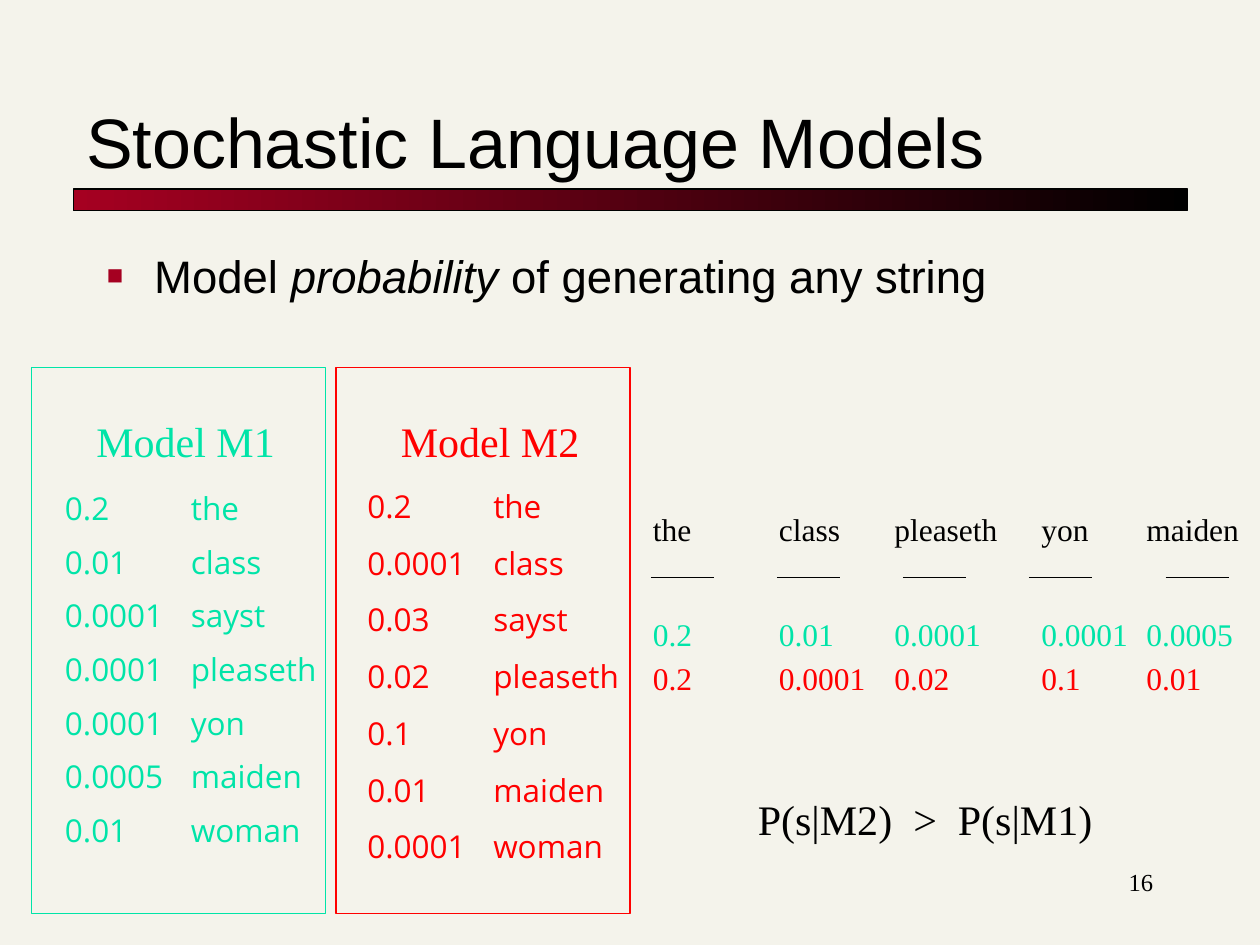
from lxml.etree import SubElement
from pptx import Presentation
from pptx.dml.color import RGBColor
from pptx.enum.shapes import MSO_CONNECTOR, MSO_SHAPE
from pptx.enum.text import MSO_ANCHOR, MSO_AUTO_SIZE, PP_ALIGN
from pptx.oxml.ns import qn
from pptx.util import Pt

BLACK, RED, GREEN, CRIMSON, CREAM = "000000", "FF0000", "00E4A8", "A50021", "F4F3EB"
SERIF = "Times New Roman"
WORDS = ["the", "class", "sayst", "pleaseth", "yon", "maiden", "woman"]
M1_VALUES = ["0.2", "0.01", "0.0001", "0.0001", "0.0001", "0.0005", "0.01"]
M2_VALUES = ["0.2", "0.0001", "0.03", "0.02", "0.1", "0.01", "0.0001"]
SENTENCE = ["the", "class", "pleaseth", "yon", "maiden"]
COLUMN_LEFTS = [0, 72, 138, 222, 282]
COLUMN_WIDTHS = [78, 78, 78, 72, 108]
BLANK_LEFTS = [6, 78, 150, 222, 300]


def set_color(color_format, hex_color):
    color_format.rgb = RGBColor.from_string(hex_color)


def apply_format(target, values):
    for name, value in values.items():
        setattr(target, name, value)


def add_run(paragraph, text, size, font_name, color, **extra):
    run = paragraph.add_run()
    run.text = text
    apply_format(run.font, {"size": Pt(size), "name": font_name, **extra})
    set_color(run.font.color, color)


def place(shape, box):
    names = ("left", "top", "width", "height")
    apply_format(shape, {name: Pt(value) for name, value in zip(names, box)})


def add_text(slide, box, lines, size, font_name, color, **paragraph_format):
    shape = slide.shapes.add_textbox(*map(Pt, box))
    frame = shape.text_frame
    frame.word_wrap = True
    for index, line in enumerate(lines):
        paragraph = frame.add_paragraph() if index else frame.paragraphs[0]
        apply_format(paragraph, paragraph_format)
        add_run(paragraph, line, size, font_name, color)
    return frame


def add_tab_stop(paragraph, position):
    tab_list = SubElement(paragraph._p.get_or_add_pPr(), qn("a:tabLst"))
    SubElement(tab_list, qn("a:tab"), pos=str(Pt(position)), algn="l")


def add_rectangle(slide, box, line_color):
    shape = slide.shapes.add_shape(MSO_SHAPE.RECTANGLE, *map(Pt, box))
    shape.shadow.inherit = False
    shape.fill.background()
    set_color(shape.line.color, line_color)
    shape.line.width = Pt(0.75)
    return shape


def add_title(slide, box, text):
    left, top, width, height = box
    bar = add_rectangle(slide, (left, top + height, width, 12.5), BLACK)
    bar.fill.gradient()
    bar.fill.gradient_angle = 0
    for stop, color, position in zip(bar.fill.gradient_stops, (CRIMSON, BLACK), (0, 1)):
        set_color(stop.color, color)
        stop.position = position
    title = slide.shapes.title
    place(title, box)
    frame = title.text_frame
    apply_format(frame, {
        "vertical_anchor": MSO_ANCHOR.BOTTOM,
        "auto_size": MSO_AUTO_SIZE.NONE,
        "word_wrap": True,
    })
    paragraph = frame.paragraphs[0]
    paragraph.alignment = PP_ALIGN.LEFT
    add_run(paragraph, text, 40, "Arial", BLACK)


def add_bullet(slide, box, parts):
    frame = slide.shapes.add_textbox(*map(Pt, box)).text_frame
    frame.word_wrap = True
    paragraph = frame.paragraphs[0]
    for text, italic in parts:
        add_run(paragraph, text, 26, "Arial", BLACK, italic=italic)
    properties = paragraph._p.get_or_add_pPr()
    properties.set("marL", str(Pt(27)))
    properties.set("indent", str(Pt(-27)))
    bullet_color = SubElement(properties, qn("a:buClr"))
    SubElement(bullet_color, qn("a:srgbClr"), val=CRIMSON)
    SubElement(properties, qn("a:buSzPct"), val="60000")
    SubElement(properties, qn("a:buFont"), typeface="Arial")
    SubElement(properties, qn("a:buChar"), char="■")


def add_model(slide, box, name, values, color, list_offset, spacing):
    left, top, width, height = box
    add_rectangle(slide, box, color)
    add_text(slide, (left + 30, top + 24, 126, 36), [name], 24, SERIF, color)
    offset_x, offset_y = list_offset
    lines = [f"{value}\t{word}" for value, word in zip(values, WORDS)]
    frame = add_text(slide, (left + offset_x, top + offset_y, 170, 226), lines,
                     18, "Open Sans", color, **spacing)
    for paragraph in frame.paragraphs:
        add_tab_stop(paragraph, 72)


def add_blank(slide, left, top, width):
    line = slide.shapes.add_connector(
        MSO_CONNECTOR.STRAIGHT, Pt(left), Pt(top), Pt(left + width), Pt(top))
    set_color(line.line.color, BLACK)
    line.line.width = Pt(0.75)
    SubElement(line._element.spPr, qn("a:effectLst"))


def add_comparison(slide, box):
    left, top, width, height = box
    m1 = dict(zip(WORDS, M1_VALUES))
    m2 = dict(zip(WORDS, M2_VALUES))
    rows = [
        (0, SENTENCE, BLACK),
        (60, [m1[word] for word in SENTENCE], GREEN),
        (85, [m2[word] for word in SENTENCE], RED),
    ]
    for offset, texts, color in rows:
        for column, column_width, text in zip(COLUMN_LEFTS, COLUMN_WIDTHS, texts):
            add_text(slide, (left + column, top + offset, column_width, 29),
                     [text], 18, SERIF, color)
    for blank in BLANK_LEFTS:
        add_blank(slide, left + blank, top + 42, 36)
    add_text(slide, (left + 60, top + height - 36, 210, 36),
             ["P(s|M2)  >  P(s|M1)"], 24, SERIF, BLACK)


def main():
    presentation = Presentation()
    apply_format(presentation, {"slide_width": Pt(720), "slide_height": Pt(540)})
    slide = presentation.slides.add_slide(presentation.slide_layouts[5])
    slide.background.fill.solid()
    set_color(slide.background.fill.fore_color, CREAM)

    add_title(slide, (42, 30, 636.5, 78), "Stochastic Language Models")
    add_bullet(slide, (54, 138, 612, 86),
               [("Model ", False), ("probability", True),
                (" of generating any string", False)])
    add_model(slide, (18, 210, 168, 312), "Model M1", M1_VALUES, GREEN, (12, 66),
              {"line_spacing": Pt(21.6), "space_before": Pt(9)})
    add_model(slide, (192, 210, 168, 312), "Model M2", M2_VALUES, RED, (10.8, 54),
              {"line_spacing": Pt(32.4)})
    add_comparison(slide, (366, 288, 354, 198))
    add_text(slide, (516, 492, 150, 36), ["16"], 14, SERIF, BLACK,
             alignment=PP_ALIGN.RIGHT)
    presentation.save("out.pptx")


if __name__ == "__main__":
    main()
